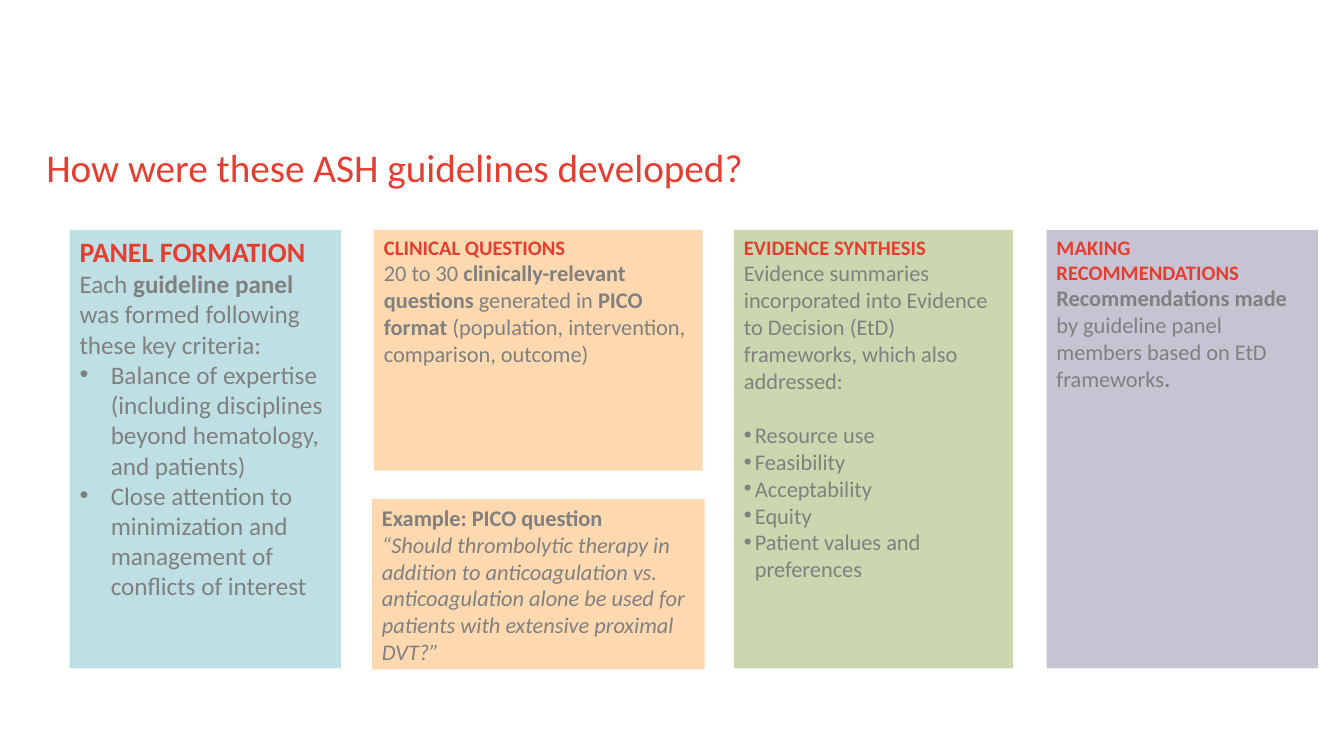
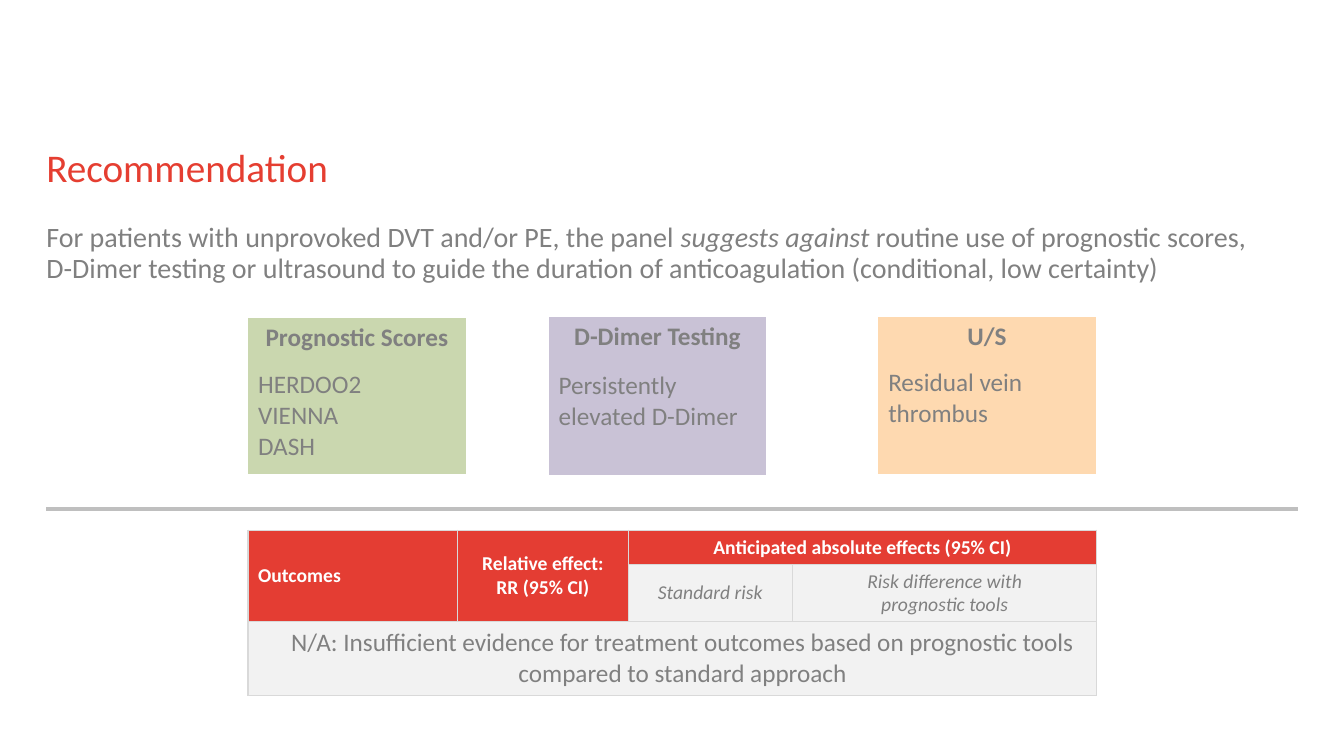
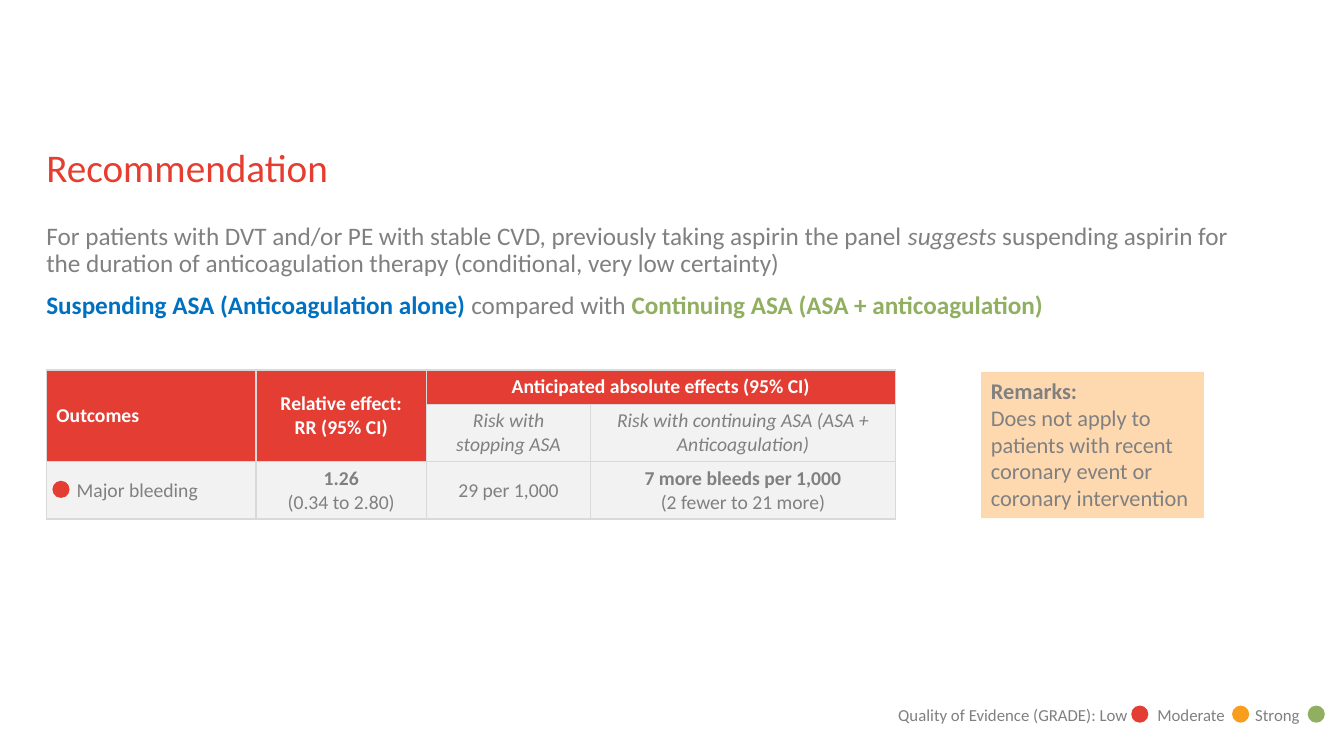
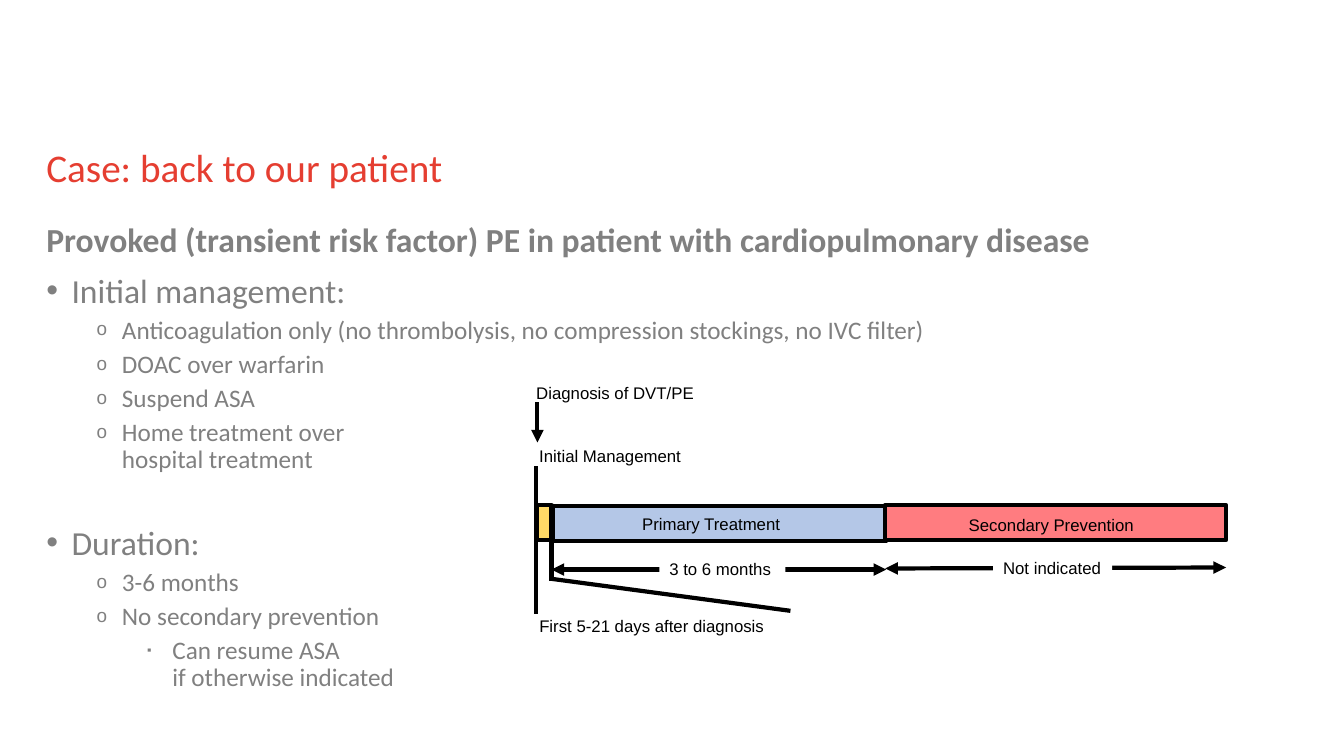
import pptx
import pptx.util
import pptx.dml.color
import pptx.enum.shapes
import pptx.enum.text
import pptx.oxml.ns
import pptx.oxml.xmlchemy
from dataclasses import dataclass

Inches = pptx.util.Inches
Shape = pptx.enum.shapes.MSO_SHAPE
Align = pptx.enum.text.PP_ALIGN
Anchor = pptx.enum.text.MSO_ANCHOR


@dataclass(frozen=True)
class Theme:
    font: str = "Calibri"
    diagram_font: str = "Arial"
    red: str = "E53E31"
    header_red: str = "E43D33"
    gray: str = "808080"
    white: str = "FFFFFF"
    black: str = "000000"
    rule: str = "BFBFBF"
    border: str = "D9D9D9"
    pale: str = "F2F2F2"
    peach: str = "FED9B0"
    sage: str = "CAD7AF"
    lilac: str = "C9C2D6"
    aqua: str = "BEE0E4"
    violet: str = "8B80A3"
    blue: str = "0070C0"
    green: str = "91AF61"
    amber: str = "F99D1C"
    initial: str = "FFD966"
    primary: str = "B4C7E7"
    secondary: str = "FF7C80"
    title: float = 28
    lead: float = 24
    large: float = 20
    body: float = 18
    panel: float = 16
    panel_head: float = 14.7
    table: float = 14
    small: float = 12


THEME = Theme()
INSETS = (0.1, 0.05, 0.1, 0.05)
FLUSH = (0, 0, 0, 0)
BOLD = {"bold": True}
ITALIC = {"italic": True}


def para(*runs, **layout):
    return {"runs": runs, **layout}


def heading(text, size=THEME.panel_head):
    return para((text, {"bold": True, "color": THEME.red, "size": size}))


def bulleted(items, char, left, hang, **layout):
    return [para(item, bullet=(char, left, hang), **layout) for item in items]


def sub_points(*items):
    return bulleted(items, "o", 0.75, 0.25, bullet_size=75, before=5, size=THEME.body)


RESOURCE_POINTS = bulleted(
    ["Resource use", "Feasibility", "Acceptability", "Equity", "Patient values and preferences"],
    "•", 0.11, 0.11)
RESOURCE_POINTS[0]["before"] = 19.5

PANELS = [
    ((0.69, 2.28, 2.69, 4.35), THEME.aqua, None, THEME.body, [
        heading("PANEL FORMATION", THEME.large),
        para("Each ", ("guideline panel", BOLD), " was formed following these key criteria:"),
        *bulleted(["Balance of expertise (including disciplines beyond hematology, and patients)",
                   "Close attention to minimization and management of conflicts of interest"],
                  "•", 0.31, 0.31)]),
    ((3.71, 2.28, 3.26, 2.39), THEME.peach, None, THEME.panel, [
        heading("CLINICAL QUESTIONS"),
        para("20 to 30 ", ("clinically-relevant questions", BOLD), " generated in ",
             ("PICO format", BOLD), " (population, intervention, comparison, outcome)")]),
    ((3.69, 4.95, 3.3, 1.69), THEME.peach, None, THEME.panel, [
        para(("Example: PICO question", BOLD)),
        para(("“Should thrombolytic therapy in addition to anticoagulation vs. anticoagulation "
              "alone be used for patients with extensive proximal DVT?”", ITALIC))]),
    ((7.28, 2.28, 2.77, 4.35), THEME.sage, None, THEME.panel, [
        heading("EVIDENCE SYNTHESIS"),
        para("Evidence summaries incorporated into Evidence to Decision (EtD) frameworks, "
             "which also addressed:"),
        *RESOURCE_POINTS]),
    ((10.38, 2.28, 2.69, 4.35), THEME.violet, 47, THEME.panel, [
        heading("MAKING RECOMMENDATIONS"),
        para(("Recommendations made ", BOLD),
             "by guideline panel members based on EtD frameworks", (".", BOLD))]),
]

PROGNOSTIC_ADVICE = [para(
    "For patients with unprovoked DVT and/or PE, the panel ", ("suggests against", ITALIC),
    " routine use of prognostic scores, D-Dimer testing or ultrasound to guide the duration of "
    "anticoagulation (conditional, low certainty)")]

TOOLS = [
    (2.46, 3.15, (0.47, 1.08), THEME.sage, "Prognostic Scores", ["HERDOO2", "VIENNA", "DASH"]),
    (5.44, 3.14, (0.49, 1.08), THEME.lilac, "D-Dimer Testing", ["Persistently elevated D-Dimer"]),
    (8.71, 3.14, (0.46, 1.1), THEME.peach, "U/S", ["Residual vein thrombus"]),
]

ASPIRIN_ADVICE = [
    para("For patients with DVT and/or PE with stable CVD, previously taking aspirin the panel ",
         ("suggests", ITALIC),
         " suspending aspirin for the duration of anticoagulation therapy "
         "(conditional, very low certainty)"),
    para(("Suspending ASA (Anticoagulation alone) ", {"bold": True, "color": THEME.blue}),
         "compared with ",
         ("Continuing ASA (ASA + anticoagulation)", {"bold": True, "color": THEME.green}),
         before=10),
]

EFFECT_COLUMNS = (2.08, 1.69, 1.63, 3.02)
EFFECT_HEADER = [
    (0, 0, 2, 1, "header", [para("Outcomes", align=Align.LEFT)]),
    (0, 1, 2, 1, "header", [para("Relative effect:"), para("RR (95% CI)")]),
    (0, 2, 1, 2, "header", [para("Anticipated absolute effects (95% CI)")]),
]
NO_EVIDENCE = [
    (2, 0, 1, 4, "note", [
        para("N/A: Insufficient evidence for treatment outcomes based on prognostic tools"),
        para("compared to standard approach")])]
BLEEDING = [
    (2, 0, 1, 1, "outcome", [para("Major bleeding", align=Align.LEFT)]),
    (2, 1, 1, 1, "value", [para(("1.26", BOLD)), para("(0.34 to 2.80)")]),
    (2, 2, 1, 1, "value", [para("29 per 1,000")]),
    (2, 3, 1, 1, "value", [para(("7 more bleeds per 1,000", BOLD)), para("(2 fewer to 21 more)")]),
]
CELL_STYLES = {
    "header": (THEME.header_red, INSETS, {"color": THEME.white, "bold": True, "size": THEME.table}),
    "subheader": (THEME.pale, INSETS, {"italic": True, "size": THEME.table}),
    "note": (THEME.pale, (0.3, 0.05, 0.1, 0.05), {"size": THEME.body}),
    "outcome": (THEME.pale, (0.3, 0.05, 0.1, 0.05), {"size": THEME.table}),
    "value": (THEME.pale, INSETS, {"size": THEME.table}),
}

GRADES = [
    ("Quality of Evidence (GRADE): Low", 8.81, 11.22, THEME.header_red),
    ("Moderate", 11.38, 12.22, THEME.amber),
    ("Strong", 12.35, 12.97, THEME.green),
]
REMARKS = [
    para(("Remarks:", BOLD)),
    para("Does not apply to patients with recent coronary event or coronary intervention"),
]

CASE_NOTES = [
    para(("Provoked (transient risk factor) PE in patient with cardiopulmonary disease", BOLD)),
    *bulleted(["Initial management:"], "•", 0.25, 0.25, before=10),
    *sub_points("Anticoagulation only (no thrombolysis, no compression stockings, no IVC filter)",
                "DOAC over warfarin", "Suspend ASA", "Home treatment over\nhospital treatment"),
    *bulleted(["Duration:"], "•", 0.25, 0.25, before=37),
    *sub_points("3-6 months", "No secondary prevention"),
    *bulleted(["Can resume ASA\nif otherwise indicated"], "▪", 1.25, 0.25,
              bullet_size=50, before=5, size=THEME.body),
]
PHASES = [
    ((5.48, 5.02, 3.31, 0.35), THEME.primary),
    ((8.78, 5.01, 3.38, 0.35), THEME.secondary),
    ((5.32, 5.01, 0.15, 0.35), THEME.initial),
]
TIMELINE_LINES = [
    ((5.32, 5.01), (5.32, 4.62), ()),
    ((5.33, 3.99), (5.33, 4.39), ("tail",)),
    ((5.47, 5.65), (8.79, 5.65), ("head", "tail")),
    ((8.78, 5.64), (12.16, 5.63), ("head", "tail")),
    ((5.32, 5.36), (5.32, 6.09), ()),
    ((5.47, 5.37), (5.47, 5.76), ()),
    ((5.45, 5.74), (7.84, 6.06), ()),
]
TIMELINE_LABELS = [
    ("Primary Treatment", (6.27, 5.05, 1.8, 0.3), None),
    ("Secondary Prevention", (9.51, 5.06, 2, 0.3), None),
    ("Initial Management", (5.25, 4.37, 1.8, 0.3), None),
    ("Diagnosis of DVT/PE", (5.22, 3.75, 1.9, 0.3), None),
    ("3 to 6 months", (6.54, 5.49, 1.25, 0.3), THEME.white),
    ("Not indicated", (9.85, 5.48, 1.18, 0.3), THEME.white),
    ("First 5-21 days after diagnosis", (5.25, 6.06, 2.52, 0.3), None),
]


def rgb(value):
    return pptx.dml.color.RGBColor.from_string(value)


def add_xml(parent, tag, **attributes):
    child = pptx.oxml.xmlchemy.OxmlElement(tag)
    for key, value in attributes.items():
        child.set(key, str(value))
    parent.append(child)
    return child


def add_bullet(paragraph, char, left, hang, percent):
    properties = paragraph._p.get_or_add_pPr()
    properties.set("marL", str(Inches(left)))
    properties.set("indent", str(-Inches(hang)))
    add_xml(properties, "a:buSzPct", val=percent * 1000)
    add_xml(properties, "a:buFont", typeface=THEME.diagram_font)
    add_xml(properties, "a:buChar", char=char)


def write_text(frame, paragraphs, *, size, color=THEME.gray, font=THEME.font, bold=False,
               italic=False, align=Align.LEFT, spacing=None, wrap=True):
    if wrap:
        frame.word_wrap = True
    for index, content in enumerate(paragraphs):
        paragraph = frame.paragraphs[0] if index == 0 else frame.add_paragraph()
        if "bullet" in content:
            add_bullet(paragraph, *content["bullet"], content.get("bullet_size", 100))
        paragraph.alignment = content.get("align", align)
        if spacing:
            paragraph.line_spacing = spacing
        if "before" in content:
            paragraph.space_before = pptx.util.Pt(content["before"])
        for item in content["runs"]:
            text, style = (item, {}) if isinstance(item, str) else item
            for number, line in enumerate(text.split("\n")):
                if number:
                    paragraph.add_line_break()
                run = paragraph.add_run()
                run.text = line
                run.font.name = font
                run.font.size = pptx.util.Pt(style.get("size", content.get("size", size)))
                run.font.bold = style.get("bold", bold)
                run.font.italic = style.get("italic", italic)
                run.font.color.rgb = rgb(style.get("color", color))


def set_insets(target, insets):
    (target.margin_left, target.margin_top,
     target.margin_right, target.margin_bottom) = map(Inches, insets)


def add_text(slide, place, paragraphs, insets=INSETS, **style):
    box = slide.shapes.add_textbox(*map(Inches, place))
    set_insets(box.text_frame, insets)
    write_text(box.text_frame, paragraphs, **style)
    return box


def add_block(slide, place, fill, outline=None, kind=Shape.RECTANGLE, opacity=None):
    block = slide.shapes.add_shape(kind, *map(Inches, place))
    block.shadow.inherit = False
    block.fill.solid()
    block.fill.fore_color.rgb = rgb(fill)
    if opacity:
        tint = block._element.spPr.find(".//" + pptx.oxml.ns.qn("a:srgbClr"))
        add_xml(tint, "a:alpha", val=opacity * 1000)
    if outline:
        block.line.color.rgb = rgb(outline)
        block.line.width = pptx.util.Pt(3)
    else:
        block.line.fill.background()
    return block


def add_panel(slide, place, fill, paragraphs, size, opacity=None):
    panel = add_block(slide, place, fill, opacity=opacity)
    panel.text_frame.vertical_anchor = Anchor.TOP
    write_text(panel.text_frame, paragraphs, size=size)


def add_dot(slide, left, top, color):
    add_block(slide, (left, top, 0.17, 0.17), color, kind=Shape.OVAL)


def add_line(slide, start, end, color, arrows=()):
    line = slide.shapes.add_connector(pptx.enum.shapes.MSO_CONNECTOR.STRAIGHT,
                                      *map(Inches, start + end))
    line.line.color.rgb = rgb(color)
    line.line.width = pptx.util.Pt(3)
    for side in arrows:
        add_xml(line.line._get_or_add_ln(), f"a:{side}End", type="triangle")
    add_xml(line._element.spPr, "a:effectLst")


def add_borders(cell):
    properties = cell._tc.get_or_add_tcPr()
    for position, side in enumerate("LRTB"):
        edge = pptx.oxml.xmlchemy.OxmlElement(f"a:ln{side}")
        edge.set("w", str(pptx.util.Pt(1)))
        add_xml(add_xml(edge, "a:solidFill"), "a:srgbClr", val=THEME.border)
        properties.insert(position, edge)


def add_grid(slide, left, top, columns, rows):
    frame = slide.shapes.add_table(len(rows), len(columns), Inches(left), Inches(top),
                                   Inches(sum(columns)), Inches(sum(rows)))
    table = frame.table
    table._tbl.tblPr.find(pptx.oxml.ns.qn("a:tableStyleId")).text = (
        "{2D5ABB26-0587-4C30-8999-92F81FD0307C}")
    for column, width in zip(table.columns, columns):
        column.width = Inches(width)
    for row, height in zip(table.rows, rows):
        row.height = Inches(height)
    return table


def fill_cell(cell, color):
    cell.fill.solid()
    cell.fill.fore_color.rgb = rgb(color)


def add_tool(slide, left, top, rows, color, name, lines):
    table = add_grid(slide, left, top, (2.16,), rows)
    parts = [([para((name, BOLD))], Align.CENTER), ([para(line) for line in lines], Align.LEFT)]
    for row, (paragraphs, align) in enumerate(parts):
        cell = table.cell(row, 0)
        fill_cell(cell, color)
        write_text(cell.text_frame, paragraphs, size=THEME.body, align=align, wrap=False)


def add_effects(slide, left, top, rows, risks, results):
    table = add_grid(slide, left, top, EFFECT_COLUMNS, rows)
    subheads = [(1, 2 + i, 1, 1, "subheader", [para(risk)]) for i, risk in enumerate(risks)]
    for row, column, deep, wide, kind, paragraphs in EFFECT_HEADER + subheads + results:
        fill, insets, style = CELL_STYLES[kind]
        cell = table.cell(row, column)
        if deep * wide > 1:
            cell.merge(table.cell(row + deep - 1, column + wide - 1))
        for r in range(row, row + deep):
            for c in range(column, column + wide):
                fill_cell(table.cell(r, c), fill)
                add_borders(table.cell(r, c))
        set_insets(cell, insets)
        cell.vertical_anchor = Anchor.MIDDLE
        write_text(cell.text_frame, paragraphs, align=Align.CENTER, wrap=False, **style)


def add_slide(deck, title):
    slide = deck.slides.add_slide(deck.slide_layouts[6])
    add_text(slide, (0.46, 1.47, 12, 0.46), [para(title)], FLUSH,
             size=THEME.title, color=THEME.red, spacing=0.9)
    return slide


def add_body(slide, paragraphs, size):
    add_text(slide, (0.46, 2.22, 12, 4.32), paragraphs, FLUSH, size=size, spacing=0.9)


def build_development(deck):
    slide = add_slide(deck, "How were these ASH guidelines developed?")
    for place, fill, opacity, size, paragraphs in PANELS:
        add_panel(slide, place, fill, paragraphs, size, opacity)


def build_prognostic(deck):
    slide = add_slide(deck, "Recommendation")
    add_body(slide, PROGNOSTIC_ADVICE, THEME.large)
    for tool in TOOLS:
        add_tool(slide, *tool)
    add_line(slide, (0.46, 5.05), (12.87, 5.05), THEME.rule)
    add_effects(slide, 2.46, 5.26, (0.34, 0.57, 0.73),
                ("Standard risk", "Risk difference with\nprognostic tools"), NO_EVIDENCE)


def build_aspirin(deck):
    slide = add_slide(deck, "Recommendation")
    add_body(slide, ASPIRIN_ADVICE, THEME.body)
    add_effects(slide, 0.46, 3.67, (0.34, 0.57, 0.57),
                ("Risk with stopping ASA", "Risk with continuing ASA (ASA + Anticoagulation)"),
                BLEEDING)
    add_dot(slide, 0.52, 4.77, THEME.header_red)
    for label, left, dot_left, color in GRADES:
        add_text(slide, (left, 6.94, dot_left - left + 0.1, 0.3), [para(label)], size=THEME.small)
        add_dot(slide, dot_left, 7, color)
    add_panel(slide, (9.73, 3.69, 2.21, 1.45), THEME.peach, REMARKS, THEME.panel)


def build_case(deck):
    slide = add_slide(deck, "Case: back to our patient")
    add_body(slide, CASE_NOTES, THEME.lead)
    for place, fill in PHASES:
        add_block(slide, place, fill, THEME.black)
    for start, end, arrows in TIMELINE_LINES:
        add_line(slide, start, end, THEME.black, arrows)
    for label, place, fill in TIMELINE_LABELS:
        box = add_text(slide, place, [para(label)], size=THEME.small, color=THEME.black,
                       font=THEME.diagram_font)
        if fill:
            box.fill.solid()
            box.fill.fore_color.rgb = rgb(fill)


def main():
    deck = pptx.Presentation()
    deck.slide_width, deck.slide_height = Inches(13.33), Inches(7.5)
    for build in (build_development, build_prognostic, build_aspirin, build_case):
        build(deck)
    deck.save("out.pptx")


if __name__ == "__main__":
    main()
